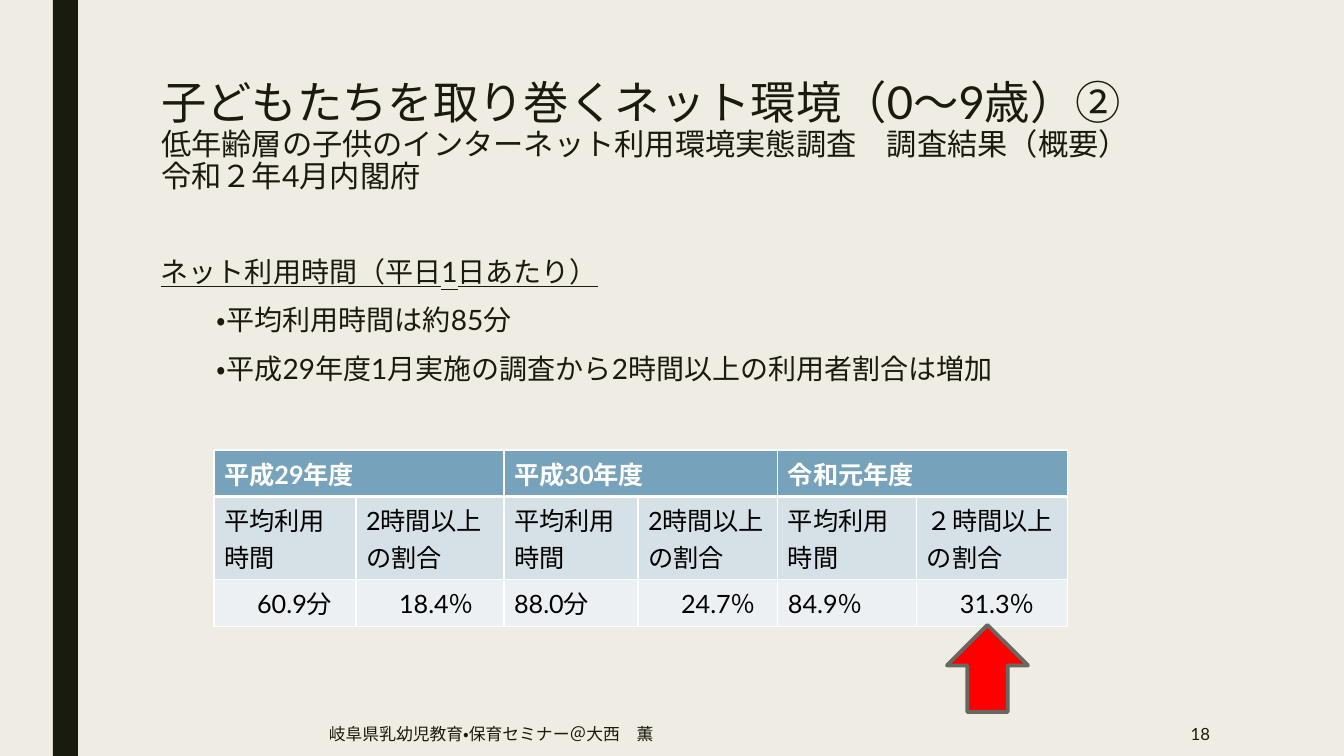
from dataclasses import dataclass

from lxml.etree import SubElement
from pptx import Presentation
from pptx.dml.color import RGBColor
from pptx.enum.lang import MSO_LANGUAGE_ID as Language
from pptx.enum.shapes import MSO_SHAPE as Shape
from pptx.enum.text import MSO_ANCHOR as Anchor, MSO_AUTO_SIZE as AutoSize, PP_ALIGN as Align
from pptx.oxml.ns import qn
from pptx.util import Emu, Pt

# Content
TITLE = [
    ("子どもたちを取り巻くネット環境（0～9歳）②", 32.4),
    ("低年齢層の子供のインターネット利用環境実態調査　調査結果（概要）", 21.6),
    ("令和２年4月内閣府", 21.6),
]
USAGE_HEADING = "ネット利用時間（平日1日あたり）"
USAGE_POINTS = [
    "・平均利用時間は約85分",
    "・平成29年度1月実施の調査から2時間以上の利用者割合は増加",
]
YEARS = ["平成29年度", "平成30年度", "令和元年度"]
MEASURES = ["平均利用時間", "2時間以上の割合"] * 2 + ["平均利用時間", "２時間以上\nの割合"]
VALUES = ["60.9分", "18.4％", "88.0分", "24.7％", "84.9％", "31.3％"]
INDENTED_VALUES = {0, 1, 3, 5}
FOOTER = "岐阜県乳幼児教育・保育セミナー＠大西　薫"
PAGE_NUMBER = "18"

# Layout in px: left, top, width, height
SLIDE_SIZE = (1344, 756)
BAND = (53, 0, 25, 756)
TITLE_BOX = (151, 76, 1058, 163)
USAGE_BOX = (151, 252, 1058, 395)
TABLE_ORIGIN = (214, 450)
COLUMNS = [142, 148, 134, 140, 139, 151]
ROWS = [44, 78, 44]
ARROW = (947, 625, 81, 87)
FOOTER_BOX = (319, 712, 693, 44)
NUMBER_BOX = (1044, 712, 176, 44)
POINT_INDENT = 56
VALUE_INDENT = 33


@dataclass(frozen=True)
class Theme:
    font: str = "Lato"
    background: str = "EFEDE3"
    ink: str = "191B0E"
    black: str = "000000"
    white: str = "FFFFFF"
    header: str = "77A2BB"
    measures: str = "D6E0E7"
    values: str = "ECF0F3"
    arrow: str = "FF0000"
    arrow_line: str = "686863"
    body_size: float = 20
    table_size: float = 18
    footer_size: float = 12


THEME = Theme()


def px(length):
    return Emu(round(length * 914400 / 100.8))


def color(value):
    return RGBColor.from_string(value)


def paint(target, value):
    target.fill.solid()
    target.fill.fore_color.rgb = color(value)


def add_run(paragraph, text, size, ink=THEME.ink, bold=False, underline=False):
    run = paragraph.add_run()
    run.text = text
    font = run.font
    font.name, font.size, font.bold, font.underline = THEME.font, Pt(size), bold, underline
    font.color.rgb = color(ink)
    font.language_id = Language.JAPANESE


def indent(paragraph, length):
    properties = paragraph._p.get_or_add_pPr()
    properties.set("marL", str(px(length)))
    properties.set("indent", "0")


def prepare_frame(frame, anchor):
    frame.word_wrap = True
    frame.auto_size = AutoSize.NONE
    frame.vertical_anchor = anchor
    return frame


def add_text_frame(slide, box, anchor=Anchor.TOP):
    return prepare_frame(slide.shapes.add_textbox(*map(px, box)).text_frame, anchor)


def add_preset(slide, preset, box, fill):
    shape = slide.shapes.add_shape(preset, *map(px, box))
    shape.shadow.inherit = False
    paint(shape, fill)
    shape.line.fill.background()
    return shape


def set_borders(cell, top, bottom):
    properties = cell._tc.get_or_add_tcPr()
    for side, width in (("L", 1), ("R", 1), ("T", top), ("B", bottom)):
        line = SubElement(properties, qn(f"a:ln{side}"), w=str(Pt(width)))
        fill = SubElement(line, qn("a:solidFill"))
        SubElement(fill, qn("a:srgbClr"), val=THEME.white)


def add_title(slide):
    title = slide.shapes.title
    title.left, title.top, title.width, title.height = map(px, TITLE_BOX)
    paragraph = prepare_frame(title.text_frame, Anchor.TOP).paragraphs[0]
    paragraph.alignment = Align.LEFT
    paragraph.line_spacing = 0.89
    for index, (text, size) in enumerate(TITLE):
        if index:
            paragraph.add_line_break()
        add_run(paragraph, text, size)


def add_usage(slide):
    frame = add_text_frame(slide, USAGE_BOX)
    for index, text in enumerate([USAGE_HEADING] + USAGE_POINTS):
        paragraph = frame.add_paragraph() if index else frame.paragraphs[0]
        paragraph.line_spacing = 0.94
        paragraph.space_before, paragraph.space_after = Pt(10), Pt(2)
        if index:
            indent(paragraph, POINT_INDENT)
        add_run(paragraph, text, THEME.body_size, underline=index == 0)


def add_usage_table(slide):
    size = (sum(COLUMNS), sum(ROWS))
    table = slide.shapes.add_table(
        len(ROWS), len(COLUMNS), *map(px, TABLE_ORIGIN + size)).table
    for column, width in zip(table.columns, COLUMNS):
        column.width = px(width)
    for row, height in zip(table.rows, ROWS):
        row.height = px(height)

    header = [text for year in YEARS for text in (year, "")]
    fills = [THEME.header, THEME.measures, THEME.values]
    for r, texts in enumerate([header, MEASURES, VALUES]):
        for c, text in enumerate(texts):
            cell = table.cell(r, c)
            set_borders(cell, top=3 if r == 1 else 1, bottom=3 if r == 0 else 1)
            paint(cell, fills[r])
            if not text:
                continue
            frame = cell.text_frame
            for index, line in enumerate(text.split("\n")):
                paragraph = frame.add_paragraph() if index else frame.paragraphs[0]
                if r == 2 and c in INDENTED_VALUES:
                    indent(paragraph, VALUE_INDENT)
                add_run(paragraph, line, THEME.table_size,
                        THEME.black if r else THEME.white, bold=r == 0)
    for c in range(0, len(COLUMNS), 2):
        table.cell(0, c).merge(table.cell(0, c + 1))


def add_footer(slide):
    for text, box, alignment in ((PAGE_NUMBER, NUMBER_BOX, Align.RIGHT),
                                 (FOOTER, FOOTER_BOX, Align.LEFT)):
        paragraph = add_text_frame(slide, box, Anchor.MIDDLE).paragraphs[0]
        paragraph.alignment = alignment
        add_run(paragraph, text, THEME.footer_size)


def main():
    presentation = Presentation()
    presentation.slide_width, presentation.slide_height = map(px, SLIDE_SIZE)
    slide = presentation.slides.add_slide(presentation.slide_layouts[5])
    paint(slide.background, THEME.background)

    add_preset(slide, Shape.RECTANGLE, BAND, THEME.ink)
    add_title(slide)
    add_usage(slide)
    add_usage_table(slide)
    add_footer(slide)

    # Arrow under the latest share
    arrow = add_preset(slide, Shape.UP_ARROW, ARROW, THEME.arrow)
    arrow.line.color.rgb = color(THEME.arrow_line)
    arrow.line.width = Pt(2.75)

    presentation.save("out.pptx")


if __name__ == "__main__":
    main()
